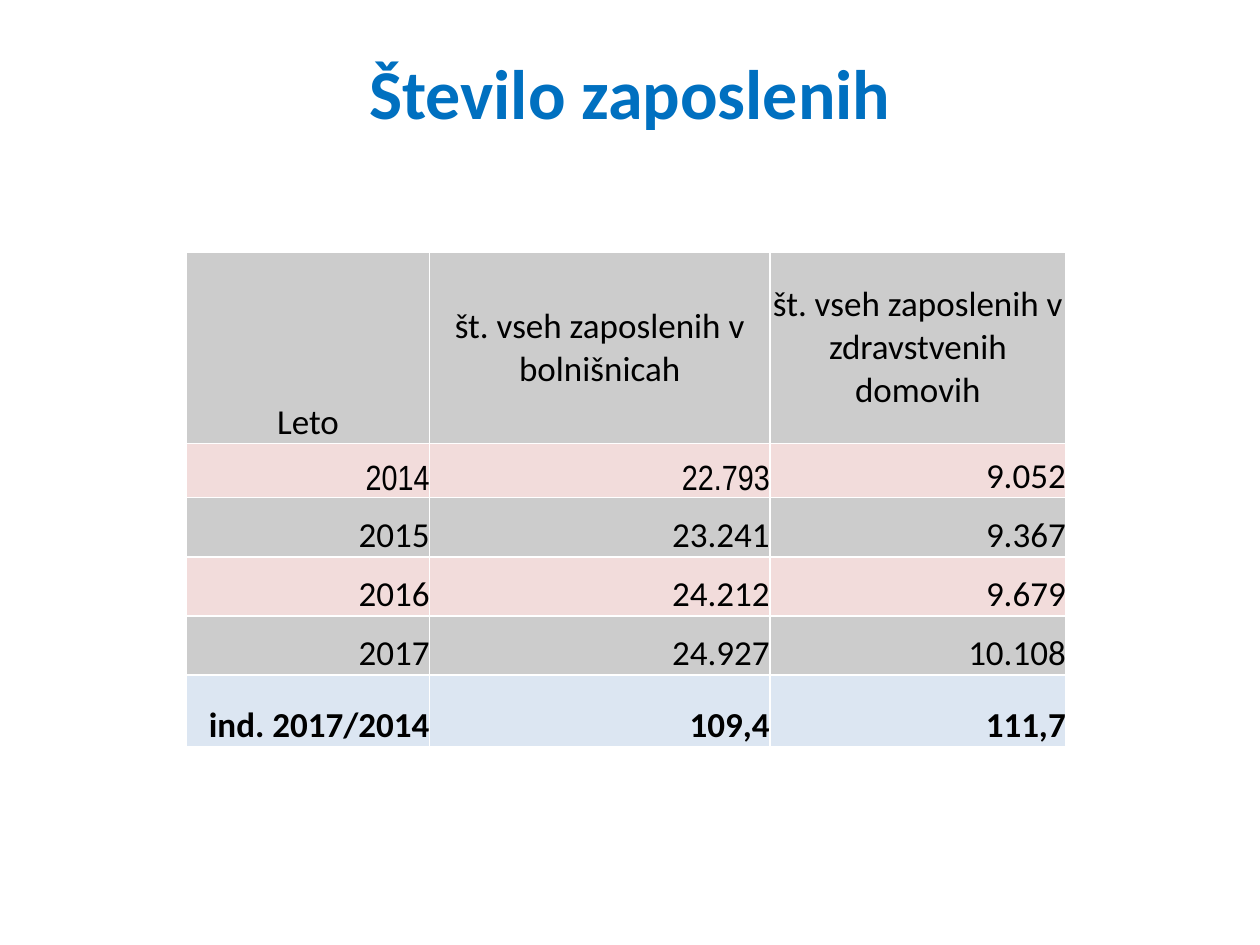
import pptx
import pptx.util
import pptx.dml.color
import pptx.enum.text
import pptx.oxml
import pptx.oxml.ns
from pptx.util import Inches

RGBColor = pptx.dml.color.RGBColor
ALIGN = pptx.enum.text.PP_ALIGN
ANCHOR = pptx.enum.text.MSO_ANCHOR

BLUE = RGBColor(0x00, 0x70, 0xC0)
BLACK = RGBColor(0x00, 0x00, 0x00)
WHITE = RGBColor(0xFF, 0xFF, 0xFF)
GRAY = RGBColor(0xCC, 0xCC, 0xCC)
PINK = RGBColor(0xF2, 0xDC, 0xDB)
PALE_BLUE = RGBColor(0xDC, 0xE6, 0xF2)

ROWS = [
    ("Leto", "št. vseh zaposlenih v bolnišnicah", "št. vseh zaposlenih v zdravstvenih domovih"),
    ("2014", "22.793", "9.052"),
    ("2015", "23.241", "9.367"),
    ("2016", "24.212", "9.679"),
    ("2017", "24.927", "10.108"),
    ("ind. 2017/2014", "109,4", "111,7"),
]
COLUMN_WIDTHS = [1.93, 2.7, 2.35]
ROW_HEIGHTS = [1.52, 0.43, 0.47, 0.47, 0.47, 0.57]
ROW_FILLS = [GRAY, PINK, GRAY, PINK, GRAY, PALE_BLUE]
NARROW_CELLS = {(1, 0), (1, 1)}


def style_text(para, size, color, bold, align, name="Calibri"):
    para.alignment = align
    para.font.name = name
    para.font.size = pptx.util.Pt(size)
    para.font.bold = bold
    para.font.color.rgb = color


def add_borders(cell, color):
    properties = cell._tc.get_or_add_tcPr()
    for position, side in enumerate(("lnL", "lnR", "lnT", "lnB")):
        border = pptx.oxml.parse_xml(
            f'<a:{side} {pptx.oxml.ns.nsdecls("a")} w="12700"><a:solidFill>'
            f'<a:srgbClr val="{color}"/></a:solidFill></a:{side}>'
        )
        properties.insert(position, border)


deck = pptx.Presentation()
deck.slide_width = Inches(10)
deck.slide_height = Inches(7.5)
page = deck.slides.add_slide(deck.slide_layouts[6])

title = page.shapes.add_textbox(Inches(0.5), Inches(0.1), Inches(9), Inches(1.25))
title.text_frame.word_wrap = True
title.text_frame.vertical_anchor = ANCHOR.MIDDLE
title.text_frame.text = "Število zaposlenih"
style_text(title.text_frame.paragraphs[0], 40, BLUE, True, ALIGN.CENTER)

table = page.shapes.add_table(
    len(ROWS), len(COLUMN_WIDTHS), Inches(1.48), Inches(2),
    Inches(sum(COLUMN_WIDTHS)), Inches(sum(ROW_HEIGHTS)),
).table
for column, width in zip(table.columns, COLUMN_WIDTHS):
    column.width = Inches(width)
for row, height in zip(table.rows, ROW_HEIGHTS):
    row.height = Inches(height)

for row_index, texts in enumerate(ROWS):
    header = row_index == 0
    total = row_index == len(ROWS) - 1
    for column_index, text in enumerate(texts):
        cell = table.cell(row_index, column_index)
        cell.text = text
        cell.margin_left = cell.margin_right = cell.margin_top = cell.margin_bottom = 0
        cell.vertical_anchor = ANCHOR.MIDDLE if header and column_index else ANCHOR.BOTTOM
        cell.fill.solid()
        cell.fill.fore_color.rgb = ROW_FILLS[row_index]
        add_borders(cell, WHITE)
        narrow = (row_index, column_index) in NARROW_CELLS
        style_text(
            cell.text_frame.paragraphs[0], 20, BLACK, total,
            ALIGN.CENTER if header else ALIGN.RIGHT,
            "Arial Narrow" if narrow else "Calibri",
        )

deck.save("out.pptx")
